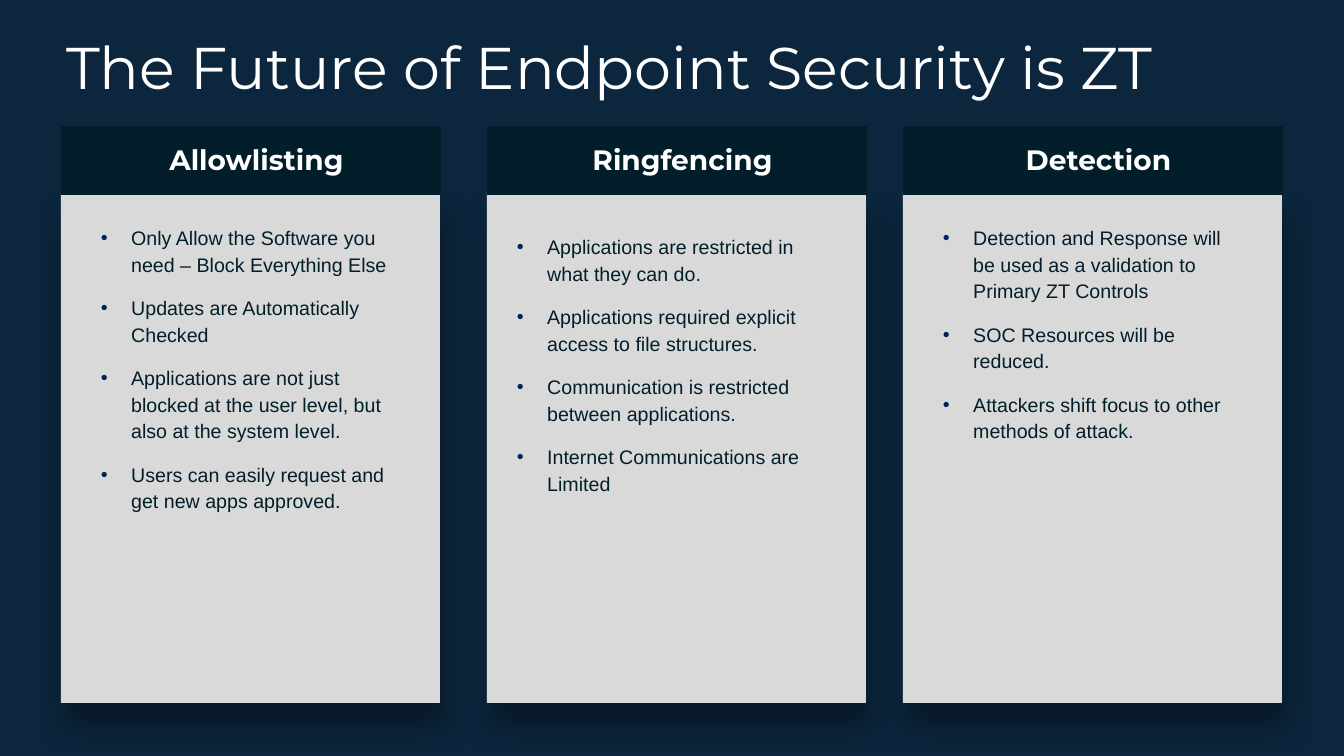
"""Builds a slide with three columns on zero-trust endpoint security."""
from lxml import etree
from pptx import Presentation
from pptx import util as u
from pptx.dml.color import RGBColor
from pptx.enum import shapes, text
from pptx.oxml import ns

PX = 12192000 / 1344
NAVY, INK, GREY, WHITE = "0C263D", "031E2B", "D9D9D9", "FFFFFF"
SHADOW = (
    f'<a:effectLst {ns.nsdecls("a")}>'
    f'<a:outerShdw blurRad="{u.Pt(21.4)}" dist="{u.Pt(17.2)}" dir="4800000" algn="t" rotWithShape="0">'
    '<a:srgbClr val="000000"><a:alpha val="37000"/></a:srgbClr>'
    '</a:outerShdw></a:effectLst>'
)
COLUMNS = [
    ("Allowlisting", 61, 83, 218, 345, [
        "Only Allow the Software you need – Block Everything Else",
        "Updates are Automatically Checked",
        "Applications are not just blocked at the user level, but also at the system level.",
        "Users can easily request and get new apps approved.",
    ]),
    ("Ringfencing", 487, 499, 227, 318, [
        "Applications are restricted in what they can do.",
        "Applications required explicit access to file structures.",
        "Communication is restricted between applications.",
        "Internet Communications are Limited",
    ]),
    ("Detection", 903, 925, 218, 318, [
        "Detection and Response will be used as a validation to Primary ZT Controls",
        "SOC Resources will be reduced.",
        "Attackers shift focus to other methods of attack.",
    ]),
]


def paint(color, tone):
    color.rgb = RGBColor.from_string(tone)


def box(*px):
    return [u.Emu(round(n * PX)) for n in px]


deck = Presentation()
deck.slide_width, deck.slide_height = box(1344, 756)
slide = deck.slides.add_slide(deck.slide_layouts[5])
slide.background.fill.solid()
paint(slide.background.fill.fore_color, NAVY)

title = slide.shapes.title
title.left, title.top, title.width, title.height = box(56, 22, 1189, 96)
frame = title.text_frame
frame.text = "The Future of Endpoint Security is ZT"
frame.auto_size = text.MSO_AUTO_SIZE.NONE
frame.vertical_anchor = text.MSO_ANCHOR.MIDDLE
para = frame.paragraphs[0]
para.alignment = text.PP_ALIGN.LEFT
para.line_spacing = 0.9
font = para.runs[0].font
font.name, font.size = "Montserrat", u.Pt(42)
paint(font.color, WHITE)

for name, left, inner, top, height, points in COLUMNS:
    for y, wide, high, tone in [(193, 379, 510, GREY), (126, 380, 69, INK)]:
        panel = slide.shapes.add_shape(shapes.MSO_SHAPE.RECTANGLE, *box(left, y, wide, high))
        panel.fill.solid()
        paint(panel.fill.fore_color, tone)
        panel.line.fill.background()
        panel.shadow.inherit = False
        if tone == GREY:
            props = panel.element.spPr
            props.replace(props.find(ns.qn("a:effectLst")), etree.fromstring(SHADOW))

    label = slide.shapes.add_textbox(*box(left + 37, 138, 317, 44))
    label.text_frame.word_wrap = True
    label.text_frame.text = name
    para = label.text_frame.paragraphs[0]
    para.alignment = text.PP_ALIGN.CENTER
    font = para.runs[0].font
    font.name, font.size, font.bold = "Montserrat", u.Pt(20), True
    paint(font.color, WHITE)

    body = slide.shapes.add_textbox(*box(inner, top, 319, height))
    frame = body.text_frame
    frame.word_wrap = True
    frame.text = "\n".join(points)
    for para in frame.paragraphs:
        para.line_spacing, para.space_after = u.Pt(19), u.Pt(12)
        props = para._p.get_or_add_pPr()
        props.set("marL", str(u.Inches(0.38)))
        props.set("indent", str(u.Inches(-0.3)))
        tint = etree.SubElement(props, ns.qn("a:buClr"))
        etree.SubElement(tint, ns.qn("a:srgbClr"), val="002060")
        etree.SubElement(props, ns.qn("a:buFont"), typeface="Arial")
        etree.SubElement(props, ns.qn("a:buChar"), char="•")
        font = para.runs[0].font
        font.name, font.size = "Arial", u.Pt(14)
        paint(font.color, INK)

deck.save("out.pptx")
